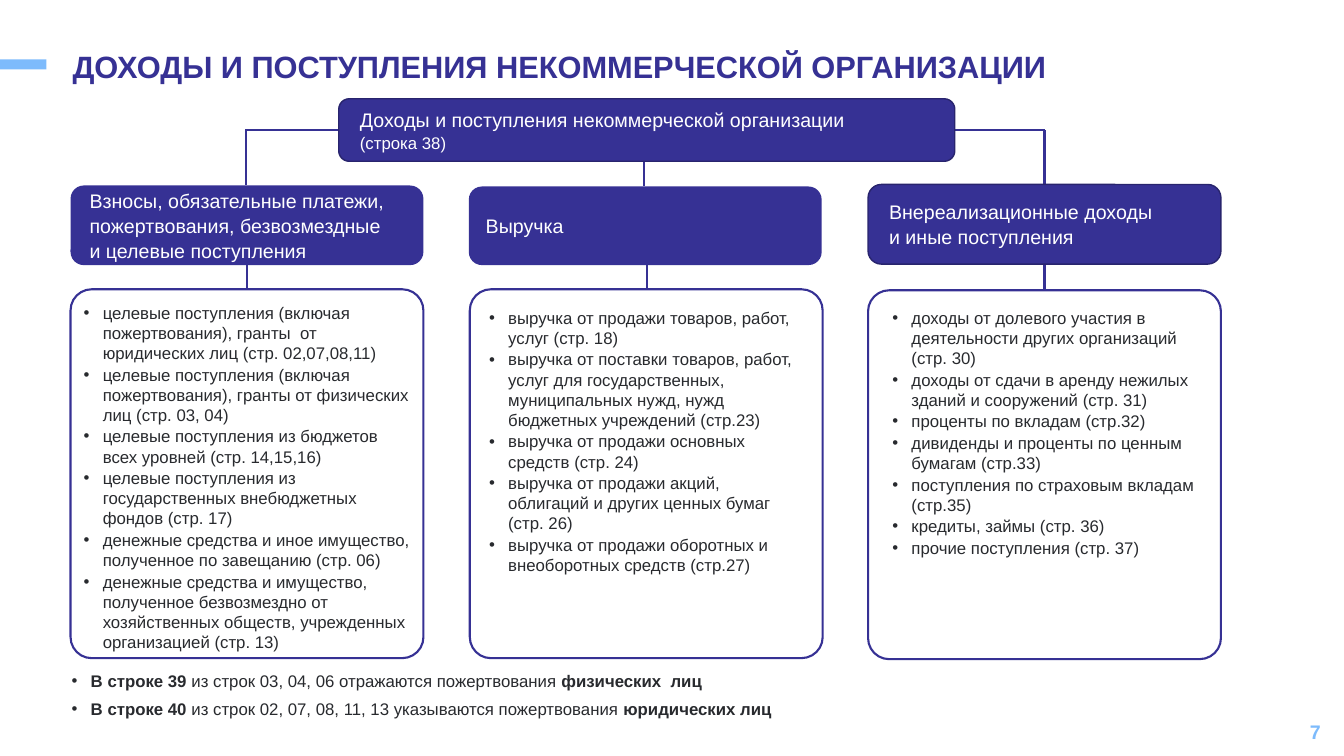
"""Builds the slide on the income of a non-profit organisation."""
from lxml import etree
from pptx import Presentation
from pptx import util as u
from pptx.dml.color import RGBColor
from pptx.enum import shapes, text
from pptx.oxml import ns

NAVY = RGBColor(0x36, 0x31, 0x94)
EDGE = RGBColor(0x28, 0x24, 0x6D)
SKY = RGBColor(0x7D, 0xBB, 0xFC)
INK = RGBColor(0x28, 0x2A, 0x2E)
WHITE = RGBColor(0xFF, 0xFF, 0xFF)
BOLD = {"bold": True}


def write(frame, lines, size=12, color=INK, bold=False, gap=1,
          align=text.PP_ALIGN.LEFT, bullet=False):
    """Fill a frame; a line is a string or a list of (string, format) parts."""
    for num, line in enumerate(lines):
        par = frame.add_paragraph() if num else frame.paragraphs[0]
        if bullet:
            props = par._p.get_or_add_pPr()
            props.set("marL", str(u.Inches(0.2)))
            props.set("indent", str(u.Inches(-0.19)))
            etree.SubElement(props, ns.qn("a:buFont")).set("typeface", "Arial")
            etree.SubElement(props, ns.qn("a:buChar")).set("char", "•")
        par.alignment = align
        par.space_before = u.Pt(gap if num else 0)
        for part, style in [(line, {})] if isinstance(line, str) else line:
            run = par.add_run()
            run.text = part
            font = run.font
            font.name = "Arial"
            font.size = u.Pt(style.get("size", size))
            font.bold = style.get("bold", bold)
            font.color.rgb = color


class Board:
    """Holds the slide and draws its elements in one style."""

    def __init__(self, slide):
        self.items = slide.shapes

    def shape(self, kind, area, fill=None, line=None, width=1.5):
        item = self.items.add_shape(kind, *map(u.Inches, area))
        item.shadow.inherit = False
        if fill:
            item.fill.solid()
            item.fill.fore_color.rgb = fill
        else:
            item.fill.background()
        if line:
            item.line.color.rgb = line
            item.line.width = u.Pt(width)
        else:
            item.line.fill.background()
        return item

    def frame(self, item, pads, anchor):
        frame = item.text_frame
        frame.word_wrap = True
        frame.vertical_anchor = anchor
        (frame.margin_left, frame.margin_top,
         frame.margin_right, frame.margin_bottom) = map(u.Inches, pads)
        return frame

    def label(self, area, lines, anchor=text.MSO_ANCHOR.TOP, **style):
        item = self.items.add_textbox(*map(u.Inches, area))
        write(self.frame(item, (0, 0.01, 0, 0), anchor), lines, **style)

    def head(self, area, lines, pad, line=None):
        item = self.shape(shapes.MSO_SHAPE.ROUNDED_RECTANGLE, area, NAVY, line, 1)
        frame = self.frame(item, (pad, 0, 0, 0), text.MSO_ANCHOR.MIDDLE)
        write(frame, lines, size=14, color=WHITE)

    def card(self, area):
        item = self.shape(shapes.MSO_SHAPE.ROUNDED_RECTANGLE, area, line=NAVY)
        item.adjustments[0] = 0.06

    def link(self, *ends):
        item = self.items.add_connector(
            shapes.MSO_CONNECTOR.STRAIGHT, *map(u.Inches, ends))
        item.line.color.rgb = NAVY
        item.line.width = u.Pt(1.5)
        etree.SubElement(item._element.spPr, ns.qn("a:effectLst"))


GROUPS = [
    {"head": (0.7, 1.84, 3.5, 0.79), "pad": 0.15, "edge": None,
     "name": ["Взносы, обязательные платежи,", "пожертвования, безвозмездные",
              "и целевые поступления"],
     "card": (0.7, 2.87, 3.5, 3.66), "list": (0.82, 2.99, 3.27, 3.5), "stem": 2.45,
     "rows": [
         "целевые поступления (включая пожертвования), гранты  от юридических лиц (стр. 02,07,08,11)",
         "целевые поступления (включая пожертвования), гранты от физических лиц (стр. 03, 04)",
         "целевые поступления из бюджетов всех уровней (стр. 14,15,16)",
         "целевые поступления из государственных внебюджетных фондов (стр. 17)",
         "денежные средства и иное имущество, полученное по завещанию (стр. 06)",
         "денежные средства и имущество, полученное безвозмездно от хозяйственных обществ, "
         "учрежденных организацией (стр. 13)"]},
    {"head": (4.65, 1.85, 3.5, 0.78), "pad": 0.13, "edge": None,
     "name": ["Выручка"],
     "card": (4.66, 2.87, 3.5, 3.66), "list": (4.84, 3.04, 3.08, 2.91), "stem": 6.42,
     "rows": [
         "выручка от продажи товаров, работ, услуг (стр. 18)",
         "выручка от поставки товаров, работ, услуг для государственных, муниципальных нужд, "
         "нужд бюджетных учреждений (стр.23)",
         "выручка от продажи основных средств (стр. 24)",
         "выручка от продажи акций, облигаций и других ценных бумаг (стр. 26)",
         "выручка от продажи оборотных и внеоборотных средств (стр.27)"]},
    {"head": (8.61, 1.83, 3.5, 0.79), "pad": 0.17, "edge": EDGE,
     "name": ["Внереализационные доходы", "и иные поступления"],
     "card": (8.61, 2.88, 3.5, 3.66), "list": (8.84, 3.04, 3.05, 2.52), "stem": 10.36,
     "rows": [
         "доходы от долевого участия в деятельности других организаций (стр. 30)",
         "доходы от сдачи в аренду нежилых зданий и сооружений (стр. 31)",
         "проценты по вкладам (стр.32)",
         "дивиденды и проценты по ценным бумагам (стр.33)",
         "поступления по страховым вкладам (стр.35)",
         "кредиты, займы (стр. 36)",
         "прочие поступления (стр. 37)"]},
]
NOTES = [
    [("В строке 39 ", BOLD), ("из строк 03, 04, 06 отражаются пожертвования ", {}),
     ("физических  лиц", BOLD)],
    [("В строке 40 ", BOLD), ("из строк 02, 07, 08, 11, 13 указываются пожертвования ", {}),
     ("юридических лиц", BOLD)],
]
LINKS = [(3.36, 1.29, 2.44, 1.29), (2.44, 1.28, 2.44, 1.84),
         (6.39, 1.6, 6.39, 1.85),
         (9.47, 1.29, 10.36, 1.29), (10.36, 1.29, 10.36, 1.83)]


def main():
    deck = Presentation()
    deck.slide_width = u.Inches(13.33)
    deck.slide_height = u.Inches(7.5)
    board = Board(deck.slides.add_slide(deck.slide_layouts[6]))
    board.shape(shapes.MSO_SHAPE.RECTANGLE, (0, 0.59, 0.46, 0.1), SKY)
    board.label((0.72, 0.48, 9.9, 0.34),
                ["ДОХОДЫ И ПОСТУПЛЕНИЯ НЕКОММЕРЧЕСКОЙ ОРГАНИЗАЦИИ"],
                anchor=text.MSO_ANCHOR.MIDDLE, size=22, color=NAVY, bold=True)
    for ends in LINKS:
        board.link(*ends)
    board.head((3.36, 0.98, 6.11, 0.62),
               ["Доходы и поступления некоммерческой организации",
                [("(строка 38)", {"size": 12})]], 0.18, EDGE)
    for group in GROUPS:
        stem = group["stem"]
        board.link(stem, 2.62, stem, 2.87)
        board.head(group["head"], group["name"], group["pad"], group["edge"])
        board.card(group["card"])
        board.label(group["list"], group["rows"], bullet=True)
    board.label((0.7, 6.64, 7.15, 0.5), NOTES, bullet=True, gap=6)
    board.label((10.2, 7.05, 2.9, 0.4), ["7"], anchor=text.MSO_ANCHOR.MIDDLE,
                size=14, color=SKY, bold=True, align=text.PP_ALIGN.RIGHT)
    deck.save("out.pptx")


if __name__ == "__main__":
    main()
